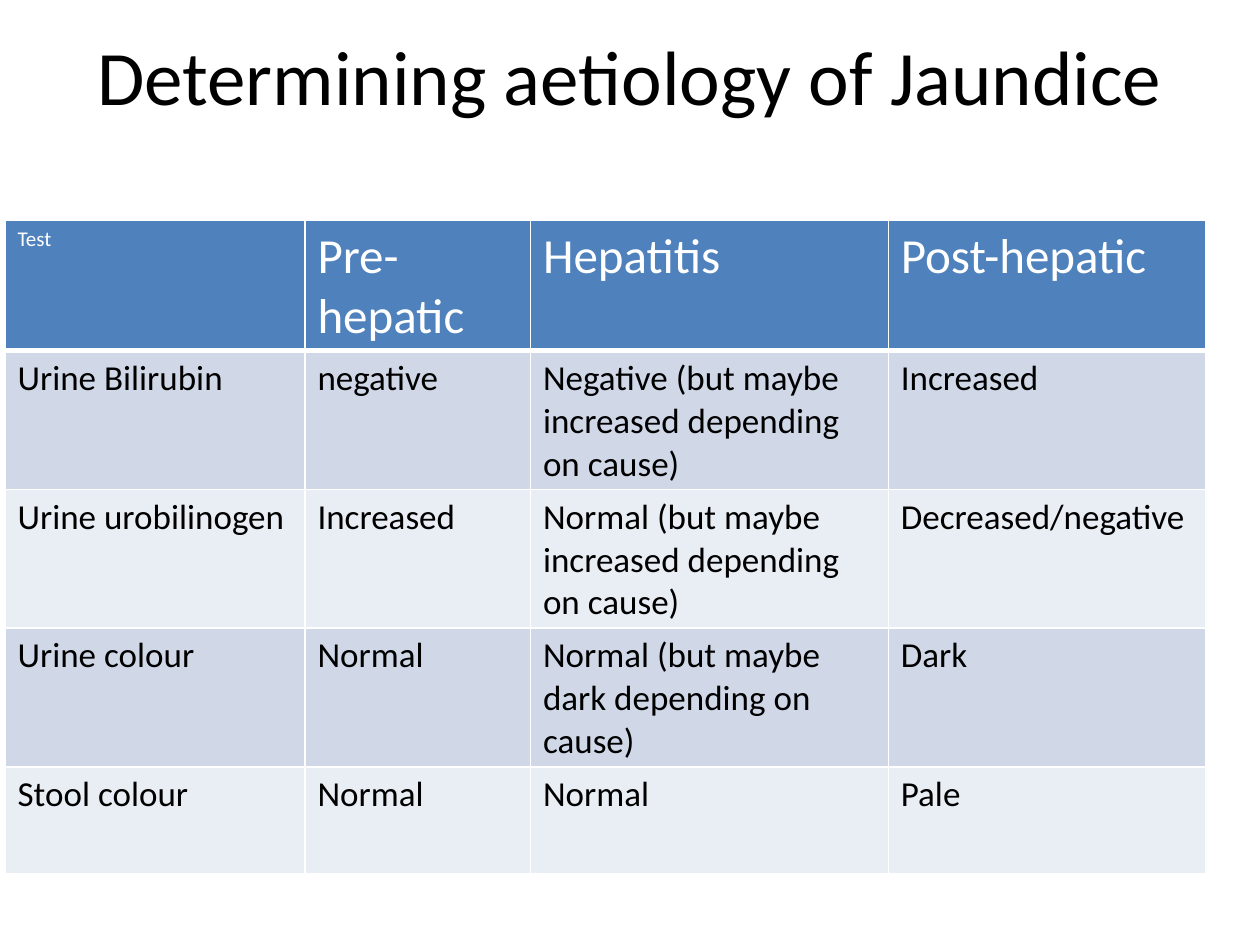
from lxml.etree import SubElement
from pptx import Presentation
from pptx.dml.color import RGBColor
from pptx.enum.text import MSO_ANCHOR, PP_ALIGN
from pptx.oxml.ns import qn
from pptx.util import Pt

BLACK = RGBColor(0x00, 0x00, 0x00)
WHITE = RGBColor(0xFF, 0xFF, 0xFF)
HEADER_BLUE = RGBColor(0x4F, 0x81, 0xBD)
BANDS = (RGBColor(0xD0, 0xD8, 0xE8), RGBColor(0xE9, 0xED, 0xF4))

TITLE_FORMAT = {"name": "Calibri", "size": Pt(44), "bold": False}
TEST_FORMAT = {"name": "Calibri", "size": Pt(12), "bold": False}
HEADER_FORMAT = {"name": "Calibri", "size": Pt(28), "bold": False}
BODY_FORMAT = {"name": "Calibri", "size": Pt(20), "bold": False}

COLUMN_WIDTHS = (171.36, 128.88, 204.48, 181.44)
ROW_HEIGHTS = (61.2, 75.6, 75.6, 75.6, 61.2)
FINDINGS = (
    ("Test", "Pre-hepatic", "Hepatitis", "Post-hepatic"),
    ("Urine Bilirubin", "negative",
     "Negative (but maybe increased depending on cause)", "Increased"),
    ("Urine urobilinogen", "Increased",
     "Normal (but maybe increased depending on cause)", "Decreased/negative"),
    ("Urine colour", "Normal",
     "Normal (but maybe dark depending on cause)", "Dark"),
    ("Stool colour", "Normal", "Normal", "Pale"),
)


def write_text(paragraph, text, text_format, color):
    run = paragraph.add_run()
    run.text = text
    for attribute, value in text_format.items():
        setattr(run.font, attribute, value)
    run.font.color.rgb = color


def add_title(slide, text):
    title = slide.shapes.add_textbox(Pt(36), Pt(-2.16), Pt(648), Pt(90))
    frame = title.text_frame
    frame.word_wrap = True
    frame.vertical_anchor = MSO_ANCHOR.MIDDLE
    frame.paragraphs[0].alignment = PP_ALIGN.CENTER
    write_text(frame.paragraphs[0], text, TITLE_FORMAT, BLACK)


def set_borders(cell, bottom_width):
    """Draw white cell borders, 1 pt wide except at the bottom."""
    properties = cell._tc.get_or_add_tcPr()
    for side, width in (("L", 1), ("R", 1), ("T", 1), ("B", bottom_width)):
        border = SubElement(properties, qn(f"a:ln{side}"), w=str(Pt(width)))
        fill = SubElement(border, qn("a:solidFill"))
        SubElement(fill, qn("a:srgbClr"), val=str(WHITE))


def fill_cell(cell, text, text_format, color, background, bottom_width):
    set_borders(cell, bottom_width)
    cell.fill.solid()
    cell.fill.fore_color.rgb = background
    write_text(cell.text_frame.paragraphs[0], text, text_format, color)


def add_findings_table(slide):
    findings = slide.shapes.add_table(
        len(ROW_HEIGHTS), len(COLUMN_WIDTHS), Pt(2.88), Pt(126),
        Pt(sum(COLUMN_WIDTHS)), Pt(sum(ROW_HEIGHTS))).table
    findings.first_row = False
    findings.horz_banding = False
    for column, width in zip(findings.columns, COLUMN_WIDTHS):
        column.width = Pt(width)
    for row, height in zip(findings.rows, ROW_HEIGHTS):
        row.height = Pt(height)
    for row_index, entries in enumerate(FINDINGS):
        for column_index, text in enumerate(entries):
            cell = findings.cell(row_index, column_index)
            if row_index == 0:
                header_format = HEADER_FORMAT if column_index else TEST_FORMAT
                fill_cell(cell, text, header_format, WHITE, HEADER_BLUE, 3)
            else:
                band = BANDS[(row_index - 1) % 2]
                fill_cell(cell, text, BODY_FORMAT, BLACK, band, 1)


def main():
    presentation = Presentation()
    presentation.slide_width = Pt(720)
    presentation.slide_height = Pt(540)
    slide = presentation.slides.add_slide(presentation.slide_layouts[6])
    add_title(slide, "Determining aetiology of Jaundice")
    add_findings_table(slide)
    presentation.save("out.pptx")


if __name__ == "__main__":
    main()
